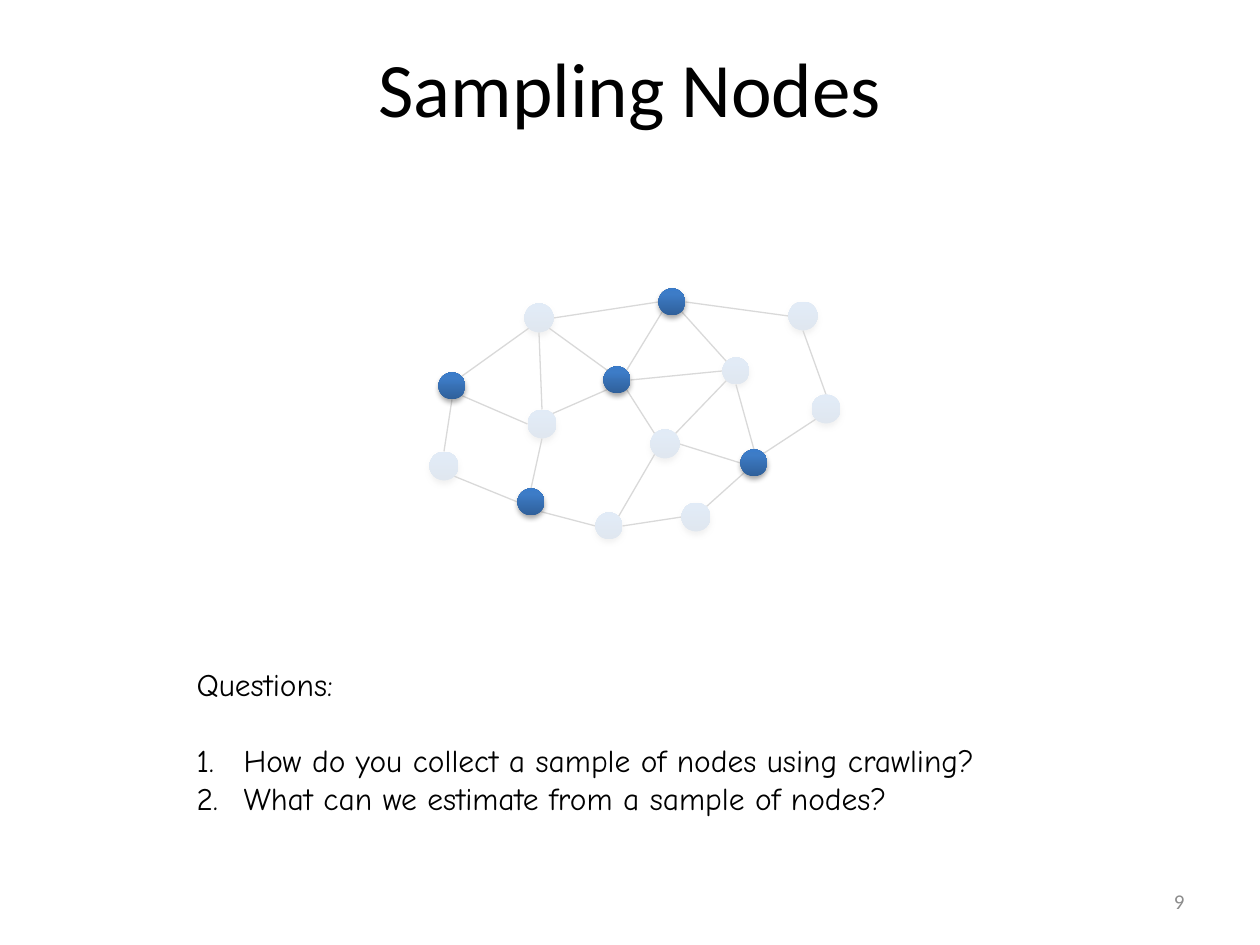
from dataclasses import dataclass
from math import sqrt

from lxml import etree
from pptx import Presentation
from pptx.dml.color import RGBColor
from pptx.enum.shapes import MSO_CONNECTOR, MSO_SHAPE
from pptx.enum.text import MSO_ANCHOR, PP_ALIGN
from pptx.oxml import parse_xml
from pptx.oxml.ns import nsdecls, qn
from pptx.util import Emu, Pt

LINE, OVAL, RECT = MSO_CONNECTOR.STRAIGHT, MSO_SHAPE.OVAL, MSO_SHAPE.RECTANGLE
TOP, MIDDLE = MSO_ANCHOR.TOP, MSO_ANCHOR.MIDDLE
LEFT, CENTER, RIGHT = PP_ALIGN.LEFT, PP_ALIGN.CENTER, PP_ALIGN.RIGHT
PX = 914400 / 126


@dataclass(frozen=True)
class Theme:
    ink: str = "000000"
    veil: str = "FFFFFF"
    veil_opacity: int = 85
    muted: str = "8C8C8C"
    node_stops: tuple = ((0, "2F5F99"), (80, "3D7CC7"), (100, "3A7CCB"))
    heading_font: str = "Calibri"
    body_font: str = "Comic Neue"
    title_size: int = 44
    body_size: int = 18
    number_size: int = 12
    edge_width: float = 0.75


THEME = Theme()

# Node centres and diameters, relative to the network box
HIDDEN_NODES = {
    "A": (34, 171, 29), "B": (132, 129, 29), "C": (129, 23, 29),
    "D": (416, 114, 29), "E": (286, 222, 29), "F": (393, 21, 29),
    "G": (326, 76, 27), "H": (199, 231, 27), "I": (255, 149, 29),
}
SAMPLED_NODES = {
    "J": (262, 7, 27), "K": (344, 168, 27), "L": (207, 85, 27),
    "M": (121, 207, 27), "N": (42, 91, 27),
}
# Each edge runs between two nodes, from compass point to compass point
EDGES = """
M.SE-H.W C.E-J.W B.NE-L.SW C.SE-L.NW K.N-G.S F.S-D.N J.E-F.W D.SW-K.NE
K.SW-E.NE J.SE-G.NW H.E-E.W L.NE-J.SW L.E-G.W L.SE-I.NW G.SW-I.NE I.SW-H.NE
I.E-K.W B.S-M.N N.SE-B.W N.S-A.N A.SE-M.W N.NE-C.SW C.S-B.N
""".split()
QUESTIONS = [
    "How do you collect a sample of nodes using crawling?",
    "What can we estimate from a sample of nodes?",
]


def px(n):
    return Emu(round(n * PX))


def place(shape, box):
    shape.left, shape.top, shape.width, shape.height = map(px, box)


def write(p, text, *, font, size, color=THEME.ink, align=LEFT, before=0):
    p.alignment, p.space_before = align, Pt(before)
    r = p.add_run()
    r.text = text
    r.font.name, r.font.size = font, Pt(size)
    r.font.color.rgb = RGBColor.from_string(color)


def set_bullet(p, indent=0):
    """Number the paragraph with a hanging indent, or clear its bullet if indent is 0."""
    pPr = p._p.get_or_add_pPr()
    pPr.set("marL", str(px(indent)))
    pPr.set("indent", str(-px(indent)))
    if indent:
        etree.SubElement(pPr, qn("a:buFontTx"))
        etree.SubElement(pPr, qn("a:buAutoNum"), type="arabicPeriod")
    else:
        etree.SubElement(pPr, qn("a:buNone"))


def add_title(s, box, text):
    place(s.shapes.title, box)
    tf = s.shapes.title.text_frame
    tf.vertical_anchor = MIDDLE
    write(tf.paragraphs[0], text, font=THEME.heading_font, size=THEME.title_size, align=CENTER)


def add_node(s, x, y, d):
    sp = s.shapes.add_shape(OVAL, px(x - d / 2), px(y - d / 2), px(d), px(d))
    sp.line.fill.background()
    stops = "".join(
        f'<a:gs pos="{pos * 1000}"><a:srgbClr val="{color}"/></a:gs>'
        for pos, color in THEME.node_stops
    )
    spPr = sp._element.spPr
    spPr.find(qn("a:ln")).addprevious(parse_xml(
        f'<a:gradFill {nsdecls("a")} rotWithShape="1"><a:gsLst>{stops}</a:gsLst>'
        '<a:lin ang="16200000" scaled="0"/></a:gradFill>'
    ))
    spPr.append(parse_xml(
        f'<a:effectLst {nsdecls("a")}><a:outerShdw blurRad="{Pt(3.1)}" dist="{Pt(1.8)}" '
        f'dir="5400000" rotWithShape="0"><a:srgbClr val="{THEME.ink}">'
        '<a:alpha val="35000"/></a:srgbClr></a:outerShdw></a:effectLst>'
    ))


def rim_point(node, compass):
    x, y, d = node
    dx = ("E" in compass) - ("W" in compass)
    dy = ("S" in compass) - ("N" in compass)
    reach = d / 2 / sqrt(dx * dx + dy * dy)
    return px(x + dx * reach), px(y + dy * reach)


def add_edge(s, start, end):
    c = s.shapes.add_connector(LINE, *start, *end)
    c.line.color.rgb = RGBColor.from_string(THEME.ink)
    c.line.width = Pt(THEME.edge_width)
    etree.SubElement(c._element.spPr, qn("a:effectLst"))


def add_veil(s, box):
    sp = s.shapes.add_shape(RECT, *map(px, box))
    sp.shadow.inherit = False
    sp.line.fill.background()
    sp.fill.solid()
    sp.fill.fore_color.rgb = RGBColor.from_string(THEME.veil)
    color = sp._element.spPr.find(qn("a:solidFill"))[0]
    etree.SubElement(color, qn("a:alpha"), val=str(THEME.veil_opacity * 1000))


def add_network(s, box):
    """Draw the graph, fade it with a veil, and set the sampled nodes on top."""
    left, top = box[:2]
    hidden, sampled = (
        {name: (left + x, top + y, d) for name, (x, y, d) in group.items()}
        for group in (HIDDEN_NODES, SAMPLED_NODES)
    )
    nodes = hidden | sampled
    for edge in EDGES:
        ends = (end.split(".") for end in edge.split("-"))
        add_edge(s, *(rim_point(nodes[name], compass) for name, compass in ends))
    for node in hidden.values():
        add_node(s, *node)
    add_veil(s, box)
    for node in sampled.values():
        add_node(s, *node)


def add_questions(s, box):
    body = s.placeholders[1]
    place(body, box)
    tf = body.text_frame
    tf.vertical_anchor, tf.margin_top = TOP, px(44)
    style = {"font": THEME.body_font, "size": THEME.body_size}
    p = tf.paragraphs[0]
    write(p, "Questions:", **style)
    set_bullet(p)
    for i, question in enumerate(QUESTIONS):
        p = tf.add_paragraph()
        write(p, question, before=0 if i else 22, **style)
        set_bullet(p, indent=47)


def add_page_number(s, box, number):
    tf = s.shapes.add_textbox(*map(px, box)).text_frame
    tf.word_wrap, tf.vertical_anchor = True, MIDDLE
    write(tf.paragraphs[0], number, font=THEME.heading_font, size=THEME.number_size,
          color=THEME.muted, align=RIGHT)


def main():
    prs = Presentation()
    prs.slide_width, prs.slide_height = px(1260), px(945)
    s = prs.slides.add_slide(prs.slide_layouts[1])
    add_title(s, (63, 8, 1134, 157), "Sampling Nodes")
    add_network(s, (410, 295, 465, 257))
    add_questions(s, (184, 621, 1022, 195))
    add_page_number(s, (903, 876, 294, 50), "9")
    prs.save("out.pptx")


if __name__ == "__main__":
    main()
